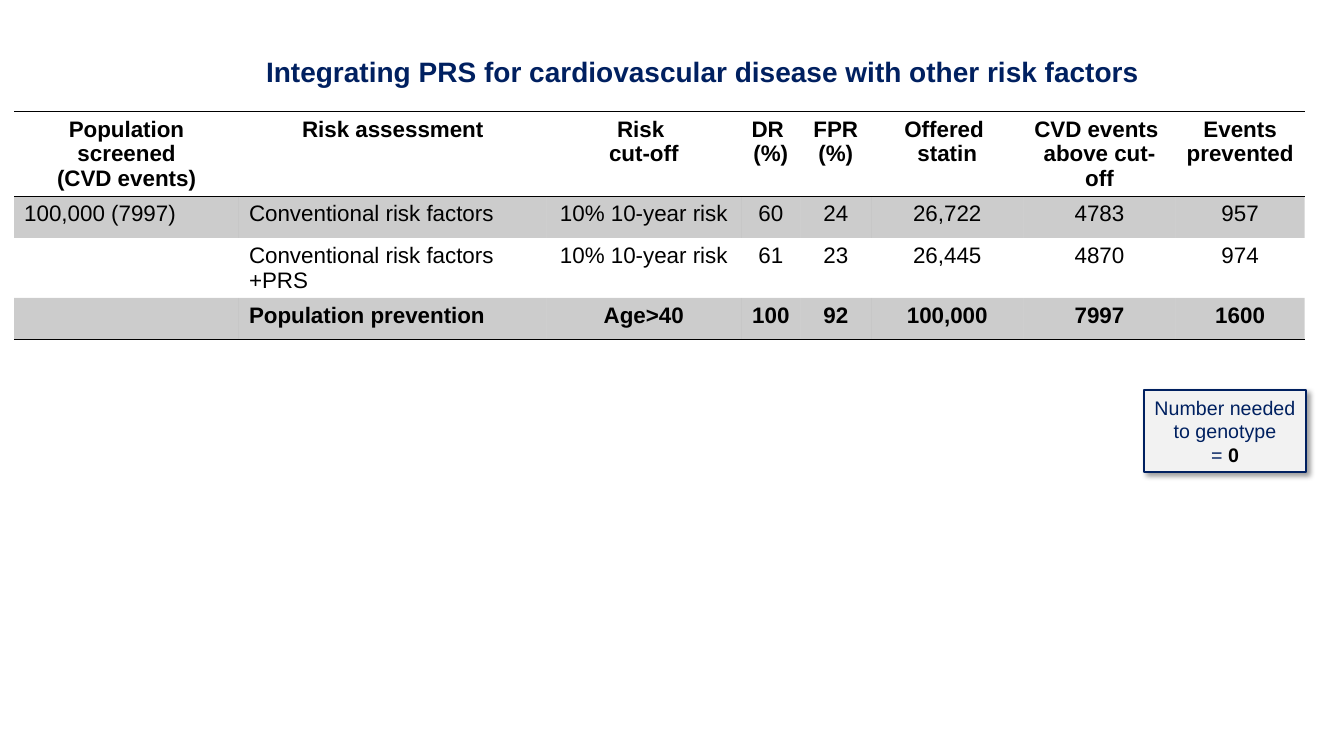
from dataclasses import dataclass

import lxml.etree
import pptx
import pptx.dml.color
import pptx.enum.shapes
import pptx.enum.text
import pptx.oxml
import pptx.oxml.ns
import pptx.shapes.autoshape
import pptx.table
import pptx.text.text
import pptx.util

Inches = pptx.util.Inches
Align = pptx.enum.text.PP_ALIGN


@dataclass(frozen=True)
class Theme:
    font: str = "Arial"
    navy: str = "002060"
    black: str = "000000"
    panel: str = "F2F2F2"
    title_size: int = 20
    table_size: int = 16
    note_size: int = 14
    rule_width: float = 1
    note_line_width: float = 1.5
    band_opacity: int = 20
    shadow_opacity: int = 40


@dataclass(frozen=True)
class Column:
    heading: tuple[str, ...]
    width: float
    align: Align = Align.CENTER


@dataclass(frozen=True)
class Row:
    values: tuple[str, ...]
    bold: bool = False
    shaded: bool = False
    rule_below: bool = False


THEME = Theme()
PERCENT_OF_OOXML = 1000
ROW_HEIGHT = 0.41
PLAIN_TABLE_STYLE = "{2D5ABB26-0587-4C30-8999-92F81FD0307C}"

COLUMNS = (
    Column(("Population screened", "(CVD events)"), 2.23, Align.LEFT),
    Column(("Risk assessment",), 3.05, Align.LEFT),
    Column(("Risk ", "cut-off"), 1.93),
    Column(("DR ", "(%)"), 0.59),
    Column(("FPR ", "(%)"), 0.7),
    Column(("Offered ", "statin"), 1.51),
    Column(("CVD events ", "above cut-off"), 1.51),
    Column(("Events prevented",), 1.28),
)
ROWS = (
    Row(("100,000 (7997)", "Conventional risk factors", "10% 10-year risk",
         "60", "24", "26,722", "4783", "957"), shaded=True),
    Row(("", "Conventional risk factors +PRS", "10% 10-year risk",
         "61", "23", "26,445", "4870", "974")),
    Row(("", "Population prevention", "Age>40",
         "100", "92", "100,000", "7997", "1600"),
        bold=True, shaded=True, rule_below=True),
)


def rgb(value: str) -> pptx.dml.color.RGBColor:
    return pptx.dml.color.RGBColor.from_string(value)


def add_run(paragraph: pptx.text.text._Paragraph, text: str, size: int,
            color: str, bold: bool = False) -> None:
    run = paragraph.add_run()
    run.text = text
    run.font.name = THEME.font
    run.font.size = pptx.util.Pt(size)
    run.font.bold = bold
    run.font.color.rgb = rgb(color)


def add_lines(frame: pptx.text.text.TextFrame, lines: tuple[str, ...], size: int,
              color: str, bold: bool, align: Align) -> None:
    for index, line in enumerate(lines):
        paragraph = frame.paragraphs[0] if index == 0 else frame.add_paragraph()
        paragraph.alignment = align
        if line:
            add_run(paragraph, line, size, color, bold)


def fill_cell(cell: pptx.table._Cell, shaded: bool) -> None:
    if not shaded:
        cell.fill.background()
        return
    cell.fill.solid()
    cell.fill.fore_color.rgb = rgb(THEME.black)
    color = cell._tc.tcPr.find(".//" + pptx.oxml.ns.qn("a:srgbClr"))
    alpha = lxml.etree.SubElement(color, pptx.oxml.ns.qn("a:alpha"))
    alpha.set("val", str(THEME.band_opacity * PERCENT_OF_OOXML))


def rule_cell(cell: pptx.table._Cell, edges: tuple[str, ...]) -> None:
    """Draw rules on the given edges ("T", "B"), ahead of the fill in the XML."""
    for position, edge in enumerate(edges):
        rule = pptx.oxml.parse_xml(
            f'<a:ln{edge} {pptx.oxml.ns.nsdecls("a")} w="{pptx.util.Pt(THEME.rule_width)}">'
            f'<a:solidFill><a:srgbClr val="{THEME.black}"/></a:solidFill></a:ln{edge}>')
        cell._tc.get_or_add_tcPr().insert(position, rule)


def add_risk_table(slide: pptx.slide.Slide) -> None:
    width = sum(column.width for column in COLUMNS)
    row_count = len(ROWS) + 1
    table = slide.shapes.add_table(
        row_count, len(COLUMNS), Inches(0.14), Inches(1.11),
        Inches(width), Inches(ROW_HEIGHT * row_count)).table
    table.first_row = False
    table.horz_banding = False
    table._tbl.tblPr.find(pptx.oxml.ns.qn("a:tableStyleId")).text = PLAIN_TABLE_STYLE
    for column_index, column in enumerate(COLUMNS):
        table.columns[column_index].width = Inches(column.width)
        heading = table.cell(0, column_index)
        add_lines(heading.text_frame, column.heading, THEME.table_size,
                  THEME.black, True, Align.CENTER)
        fill_cell(heading, False)
        rule_cell(heading, ("T", "B"))
        for row_index, row in enumerate(ROWS, start=1):
            cell = table.cell(row_index, column_index)
            add_lines(cell.text_frame, (row.values[column_index],), THEME.table_size,
                      THEME.black, row.bold, column.align)
            fill_cell(cell, row.shaded)
            if row.rule_below:
                rule_cell(cell, ("B",))


def add_title(slide: pptx.slide.Slide) -> None:
    title = slide.shapes.add_textbox(Inches(2.54), Inches(0.49), Inches(8.92), Inches(0.44))
    title.text_frame.word_wrap = False
    title.text_frame.auto_size = pptx.enum.text.MSO_AUTO_SIZE.SHAPE_TO_FIT_TEXT
    add_lines(title.text_frame,
              ("Integrating PRS for cardiovascular disease with other risk factors",),
              THEME.title_size, THEME.navy, True, Align.LEFT)


def add_drop_shadow(shape: pptx.shapes.autoshape.Shape) -> None:
    shape.shadow.inherit = False
    effects = shape._element.spPr.find(pptx.oxml.ns.qn("a:effectLst"))
    effects.append(pptx.oxml.parse_xml(
        f'<a:outerShdw {pptx.oxml.ns.nsdecls("a")} blurRad="{pptx.util.Pt(4)}" '
        f'dist="{pptx.util.Pt(3)}" dir="2700000" algn="tl" rotWithShape="0">'
        f'<a:srgbClr val="{THEME.black}">'
        f'<a:alpha val="{THEME.shadow_opacity * PERCENT_OF_OOXML}"/>'
        f'</a:srgbClr></a:outerShdw>'))


def add_genotype_note(slide: pptx.slide.Slide) -> None:
    note = slide.shapes.add_shape(
        pptx.enum.shapes.MSO_SHAPE.RECTANGLE,
        Inches(11.35), Inches(3.87), Inches(1.6), Inches(0.81))
    note.fill.solid()
    note.fill.fore_color.rgb = rgb(THEME.panel)
    note.line.color.rgb = rgb(THEME.navy)
    note.line.width = pptx.util.Pt(THEME.note_line_width)
    add_drop_shadow(note)
    frame = note.text_frame
    frame.word_wrap = False
    frame.auto_size = pptx.enum.text.MSO_AUTO_SIZE.SHAPE_TO_FIT_TEXT
    add_lines(frame, ("Number needed", "to genotype", "= "),
              THEME.note_size, THEME.navy, False, Align.CENTER)
    add_run(frame.paragraphs[-1], "0", THEME.note_size, THEME.black, True)


def main() -> None:
    presentation = pptx.Presentation()
    presentation.slide_width = Inches(13.33)
    presentation.slide_height = Inches(7.5)
    slide = presentation.slides.add_slide(presentation.slide_layouts[6])
    add_risk_table(slide)
    add_title(slide)
    add_genotype_note(slide)
    presentation.save("out.pptx")


if __name__ == "__main__":
    main()
